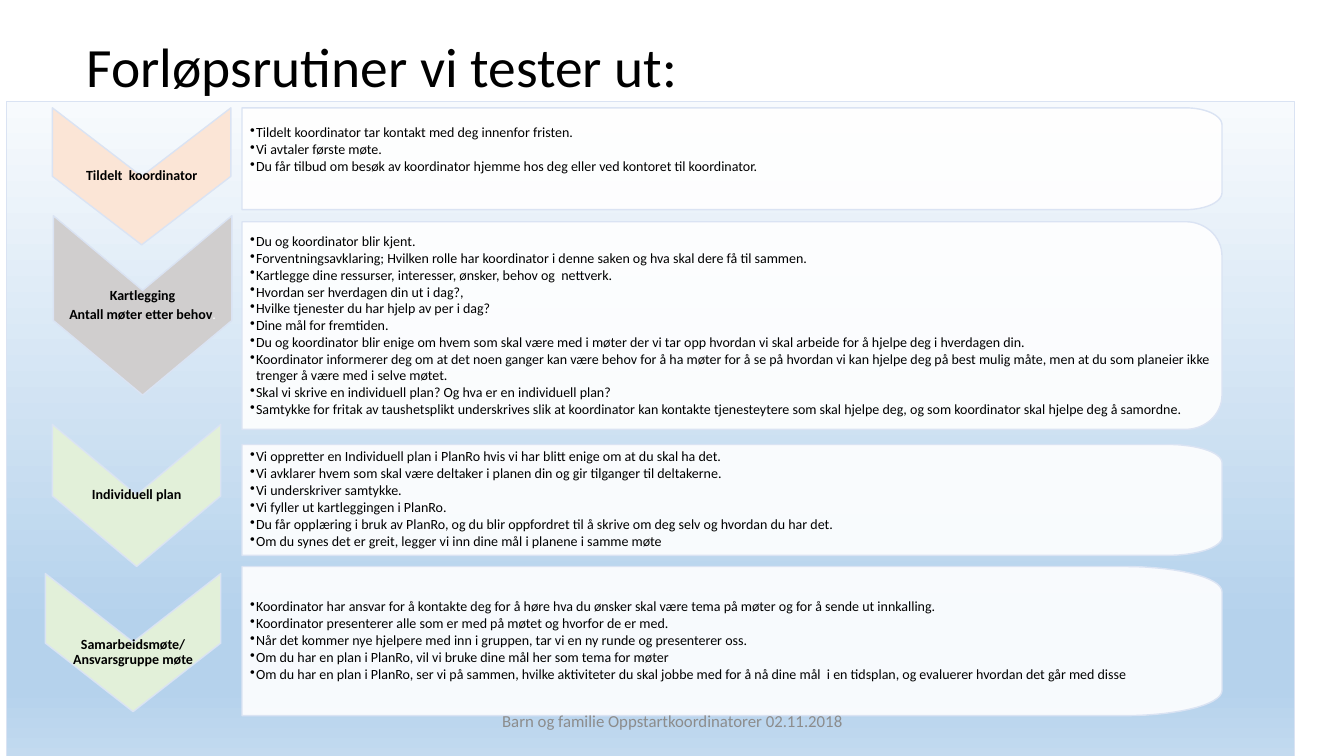
import math

from pptx import Presentation
from pptx.dml.color import RGBColor
from pptx.enum import shapes, text
from pptx.oxml.ns import qn
from pptx.util import Inches, Pt

FONT = "Calibri"
OUTLINE = "DAE3F3"
PANEL_LEFT, PANEL_RIGHT = 2.4, 12.12
BULLET_INDENT = Inches(0.06)

# chevron: left, top, right, bottom, depth of the notch, extra top inset
# panel: top, bottom, corner width, corner height, inset, extra bottom inset
steps = [
    dict(
        labels=["Tildelt  koordinator"], color="FBE5D6",
        chevron=(0.52, 1.07, 2.29, 2.43, 0.68, 0),
        panel=(1.07, 2.08, 0.36, 0.17, 0.06, 0.17),
        points=[
            "Tildelt koordinator tar kontakt med deg innenfor fristen.",
            "Vi avtaler første møte.",
            "Du får tilbud om besøk av koordinator hjemme hos deg eller ved kontoret til koordinator.",
        ]),
    dict(
        labels=["Kartlegging", "Antall møter etter behov"], color="D0CECE",
        chevron=(0.53, 2.14, 2.3, 3.92, 0.74, 0),
        panel=(2.2, 4.26, 0.36, 0.34, 0.11, 0),
        points=[
            "Du og koordinator blir kjent.",
            "Forventningsavklaring; Hvilken rolle har koordinator i denne saken og hva skal dere få til sammen.",
            "Kartlegge dine ressurser, interesser, ønsker, behov og  nettverk.",
            "Hvordan ser hverdagen din ut i dag?,",
            "Hvilke tjenester du har hjelp av per i dag?",
            "Dine mål for fremtiden.",
            "Du og koordinator blir enige om hvem som skal være med i møter der vi tar opp hvordan "
            "vi skal arbeide for å hjelpe deg i hverdagen din.",
            "Koordinator informerer deg om at det noen ganger kan være behov for å ha møter for å se på "
            "hvordan vi kan hjelpe deg på best mulig måte, men at du som planeier ikke trenger å være "
            "med i selve møtet.",
            "Skal vi skrive en individuell plan? Og hva er en individuell plan?",
            "Samtykke for fritak av taushetsplikt underskrives slik at koordinator kan kontakte "
            "tjenesteytere som skal hjelpe deg, og som koordinator skal hjelpe deg å samordne.",
        ]),
    dict(
        labels=["Individuell plan"], color="E2F0D9",
        chevron=(0.52, 4.21, 2.19, 5.62, 0.7, 0),
        panel=(4.41, 5.51, 0.54, 0.18, 0.09, 0),
        points=[
            "Vi oppretter en Individuell plan i PlanRo hvis vi har blitt enige om at du skal ha det.",
            "Vi avklarer hvem som skal være deltaker i planen din og gir tilganger til deltakerne.",
            "Vi underskriver samtykke.",
            "Vi fyller ut kartleggingen i PlanRo.",
            "Du får opplæring i bruk av PlanRo, og du blir oppfordret til å skrive om deg selv og "
            "hvordan du har det.",
            "Om du synes det er greit, legger vi inn dine mål i planene i samme møte",
        ]),
    dict(
        labels=["Samarbeidsmøte/ Ansvarsgruppe møte"], color="E2F0D9",
        chevron=(0.45, 5.69, 2.19, 7.06, 0.68, 0.2),
        panel=(5.62, 7.1, 0.97, 0.25, 0.13, 0),
        points=[
            "Koordinator har ansvar for å kontakte deg for å høre hva du ønsker skal være tema på møter "
            "og for å sende ut innkalling.",
            "Koordinator presenterer alle som er med på møtet og hvorfor de er med.",
            "Når det kommer nye hjelpere med inn i gruppen, tar vi en ny runde og presenterer oss.",
            "Om du har en plan i PlanRo, vil vi bruke dine mål her som tema for møter",
            "Om du har en plan i PlanRo, ser vi på sammen, hvilke aktiviteter du skal jobbe med for å nå "
            "dine mål  i en tidsplan, og evaluerer hvordan det går med disse",
        ]),
]


def rgb(hex_color):
    return RGBColor.from_string(hex_color)


def add_outline(points, color, lines, insets, align, space_after, bold):
    """Draw a closed polygon with points in inches and one paragraph for each line."""
    corners = [(Inches(x), Inches(y)) for x, y in points]
    builder = slide.shapes.build_freeform(*corners[0])
    builder.add_line_segments(corners[1:], close=True)
    shape = builder.convert_to_shape()
    shape.shadow.inherit = False
    shape.fill.solid()
    shape.fill.fore_color.rgb = rgb(color)
    shape.line.color.rgb = rgb(OUTLINE)
    shape.line.width = Pt(1)
    frame = shape.text_frame
    frame.word_wrap = True
    frame.vertical_anchor = text.MSO_ANCHOR.MIDDLE
    frame.margin_left, frame.margin_top, frame.margin_right, frame.margin_bottom = map(Inches, insets)
    frame.text = "\n".join(lines)
    for paragraph in frame.paragraphs:
        paragraph.alignment = align
        paragraph.line_spacing = 0.9
        paragraph.space_after = Pt(space_after)
        font = paragraph.runs[0].font
        font.name, font.size, font.bold = FONT, Pt(10), bold
        font.color.rgb = rgb("000000")
    return shape


prs = Presentation()
prs.slide_width, prs.slide_height = Inches(13.33), Inches(7.5)
slide = prs.slides.add_slide(prs.slide_layouts[5])

title = slide.shapes.title
title.left, title.top, title.width, title.height = map(Inches, (0.76, 0.45, 11.38, 0.48))
heading = title.text_frame
heading.text = "Forløpsrutiner vi tester ut:"
heading.auto_size = text.MSO_AUTO_SIZE.NONE
heading.vertical_anchor = text.MSO_ANCHOR.MIDDLE
heading.paragraphs[0].alignment = text.PP_ALIGN.LEFT
heading.paragraphs[0].line_spacing = 0.9
heading_font = heading.paragraphs[0].runs[0].font
heading_font.name, heading_font.size = FONT, Pt(39.6)
heading_font.color.rgb = rgb("000000")

backdrop = slide.shapes.add_shape(
    shapes.MSO_SHAPE.RECTANGLE, Inches(0.06), Inches(1.01), Inches(12.78), Inches(7.01))
backdrop.shadow.inherit = False
backdrop.line.color.rgb = rgb(OUTLINE)
backdrop.line.width = Pt(0.75)
backdrop.fill.gradient()
backdrop.fill.gradient_angle = 270
stops = backdrop._element.spPr.find(".//" + qn("a:gsLst"))
for stop in list(stops):
    stops.remove(stop)
for percent, color in [(0, "F7FAFD"), (74, "B5D2EC"), (83, "B5D2EC"), (100, "CEE1F2")]:
    stop = stops.makeelement(qn("a:gs"), {"pos": str(percent * 1000)})
    stop.append(stop.makeelement(qn("a:srgbClr"), {"val": color}))
    stops.append(stop)

chevrons = []
for step in steps:
    left, top, right, bottom, notch, drop = step["chevron"]
    middle = (left + right) / 2
    chevrons.append(add_outline(
        [(right, top), (right, bottom - notch), (middle, bottom),
         (left, bottom - notch), (left, top), (middle, top + notch)],
        step["color"], step["labels"], (0.01, 0.01 + drop, 0.01, 0.01),
        text.PP_ALIGN.CENTER, 3.1, True))

    top, bottom, corner_w, corner_h, inset, lift = step["panel"]
    angles = [math.radians(degrees) for degrees in range(0, 91, 6)]
    upper = [(PANEL_RIGHT - corner_w * (1 - math.sin(a)), top + corner_h * (1 - math.cos(a)))
             for a in angles]
    lower = [(x, top + bottom - y) for x, y in reversed(upper)]
    panel = add_outline(
        [(PANEL_LEFT, top), *upper, *lower, (PANEL_LEFT, bottom)],
        "FFFFFF", step["points"], (0.08, inset, inset, inset + lift),
        text.PP_ALIGN.LEFT, 1.3, False)
    white = panel._element.spPr.find(qn("a:solidFill"))[0]
    white.append(white.makeelement(qn("a:alpha"), {"val": "90000"}))
    for paragraph in panel.text_frame.paragraphs:
        properties = paragraph._p.get_or_add_pPr()
        properties.set("marL", str(BULLET_INDENT))
        properties.set("indent", str(-BULLET_INDENT))
        properties.append(properties.makeelement(qn("a:buChar"), {"char": "•"}))

full_stop = chevrons[1].text_frame.paragraphs[1].add_run()
full_stop.text = "."
full_stop.font.name, full_stop.font.size = FONT, Pt(10)
full_stop.font.color.rgb = rgb("FFFFFF")

footer = slide.shapes.add_textbox(Inches(4.42), Inches(6.95), Inches(4.5), Inches(0.4)).text_frame
footer.word_wrap = True
footer.vertical_anchor = text.MSO_ANCHOR.MIDDLE
footer.text = "Barn og familie Oppstartkoordinatorer 02.11.2018"
footer.paragraphs[0].alignment = text.PP_ALIGN.CENTER
footer_font = footer.paragraphs[0].runs[0].font
footer_font.name, footer_font.size = FONT, Pt(12)
footer_font.color.rgb = rgb("8C8C8C")

prs.save("out.pptx")
